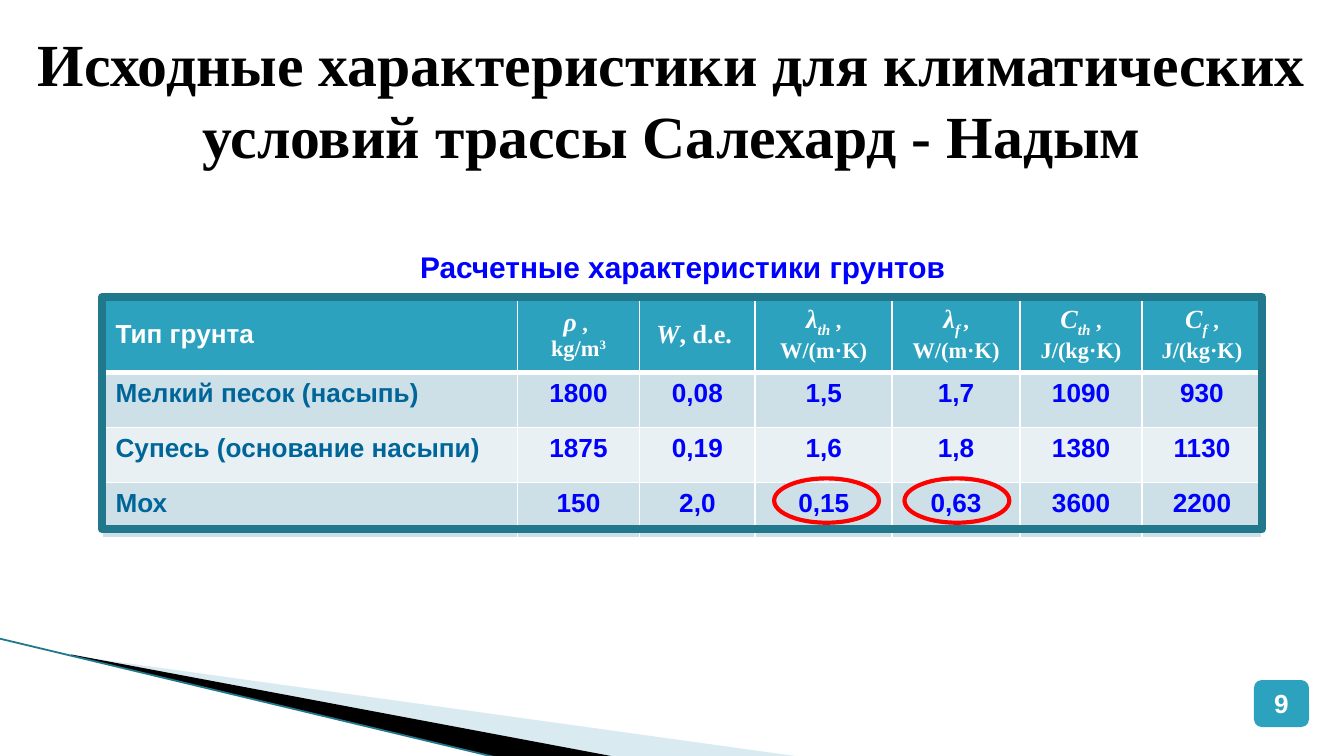
from dataclasses import dataclass

from lxml.etree import SubElement
from pptx import Presentation
from pptx.dml.color import RGBColor
from pptx.enum.shapes import MSO_CONNECTOR, MSO_SHAPE
from pptx.enum.text import MSO_ANCHOR, PP_ALIGN
from pptx.oxml.ns import qn
from pptx.util import Inches, Pt


@dataclass(frozen=True)
class Theme:
    serif: str = "Times New Roman"
    sans: str = "Arial"
    black: str = "000000"
    white: str = "FFFFFF"
    accent: str = "2DA2BF"
    frame: str = "21788D"
    pale: str = "A0CBDC"
    bands: tuple = ("CDE0E8", "E8F0F4")
    label: str = "006699"
    value: str = "0000FF"
    highlight: str = "FF0000"
    title_size: int = 32
    caption_size: int = 16
    body_size: int = 14
    unit_size: int = 12


def color(value):
    return RGBColor.from_string(value)


class SlideBuilder:
    def __init__(self, slide, theme):
        self.slide = slide
        self.theme = theme

    def style(self, paragraph, font_name, size, font_color, alignment=PP_ALIGN.CENTER):
        paragraph.alignment = alignment
        paragraph.font.name = font_name
        paragraph.font.size = Pt(size)
        paragraph.font.bold = True
        paragraph.font.color.rgb = color(font_color)

    def title(self, text, left, top, width, height):
        shape = self.slide.shapes.title
        shape.left, shape.top = Inches(left), Inches(top)
        shape.width, shape.height = Inches(width), Inches(height)
        frame = shape.text_frame
        frame.text = text
        frame.word_wrap = True
        frame.vertical_anchor = MSO_ANCHOR.TOP
        paragraph = frame.paragraphs[0]
        self.style(paragraph, self.theme.serif, self.theme.title_size, self.theme.black)

    def shape(self, kind, left, top, width, height, fill=None, line=None, line_width=1):
        shape = self.slide.shapes.add_shape(
            kind, Inches(left), Inches(top), Inches(width), Inches(height))
        self.paint(shape, fill, line, line_width)
        return shape

    def paint(self, shape, fill=None, line=None, line_width=1):
        shape.shadow.inherit = False
        if fill:
            shape.fill.solid()
            shape.fill.fore_color.rgb = color(fill)
        else:
            shape.fill.background()
        if line:
            shape.line.color.rgb = color(line)
            shape.line.width = Pt(line_width)
        else:
            shape.line.fill.background()

    def label(self, kind, text, box, fill, size, font_color):
        frame = self.shape(kind, *box, fill=fill).text_frame
        frame.text = text
        frame.word_wrap = True
        frame.vertical_anchor = MSO_ANCHOR.MIDDLE
        frame.margin_left = frame.margin_right = Inches(0.04)
        frame.margin_top = frame.margin_bottom = Inches(0.04)
        self.style(frame.paragraphs[0], self.theme.sans, size, font_color)

    def wedge(self, points, fill, opacity=100):
        corners = [(Inches(x), Inches(y)) for x, y in points]
        builder = self.slide.shapes.build_freeform(*corners[0])
        builder.add_line_segments(corners[1:], close=True)
        shape = builder.convert_to_shape()
        self.paint(shape, fill)
        if opacity < 100:
            tint = shape.element.spPr.find(qn("a:solidFill"))[0]
            SubElement(tint, qn("a:alpha"), val=str(opacity * 1000))

    def line(self, start, end, line_color, width):
        connector = self.slide.shapes.add_connector(
            MSO_CONNECTOR.STRAIGHT, *(Inches(value) for value in (*start, *end)))
        connector.line.color.rgb = color(line_color)
        connector.line.width = Pt(width)
        SubElement(connector.element.spPr, qn("a:effectLst"))

    def cell(self, cell, fill, bottom_width=1):
        properties = cell._tc.get_or_add_tcPr()
        for side in ("L", "R", "T", "B"):
            width = Pt(bottom_width if side == "B" else 1)
            border = SubElement(properties, qn(f"a:ln{side}"), w=str(width))
            solid = SubElement(border, qn("a:solidFill"))
            SubElement(solid, qn("a:srgbClr"), val=self.theme.white)
        cell.fill.solid()
        cell.fill.fore_color.rgb = color(fill)

    def header(self, cell, paragraphs, font_name, alignment):
        self.cell(cell, self.theme.accent, bottom_width=3)
        cell.vertical_anchor = MSO_ANCHOR.MIDDLE
        for index, runs in enumerate(paragraphs):
            frame = cell.text_frame
            paragraph = frame.add_paragraph() if index else frame.paragraphs[0]
            self.style(paragraph, font_name, self.theme.body_size, self.theme.white, alignment)
            for text, size, italic, baseline in runs:
                run = paragraph.add_run()
                run.text = text
                run.font.size = Pt(size)
                run.font.italic = italic
                if baseline:
                    run.font._element.set("baseline", str(baseline * 1000))

    def table(self, left, top, widths, heights, headers, rows):
        theme = self.theme
        table = self.slide.shapes.add_table(
            len(heights), len(widths), Inches(left), Inches(top),
            Inches(sum(widths)), Inches(sum(heights))).table
        for column, width in zip(table.columns, widths):
            column.width = Inches(width)
        for row, height in zip(table.rows, heights):
            row.height = Inches(height)
        for index, paragraphs in enumerate(headers):
            font_name = theme.serif if index else theme.sans
            alignment = PP_ALIGN.CENTER if index else PP_ALIGN.LEFT
            self.header(table.cell(0, index), paragraphs, font_name, alignment)
        for row_index, values in enumerate(rows):
            for index, value in enumerate(values):
                cell = table.cell(row_index + 1, index)
                self.cell(cell, theme.bands[row_index % 2])
                cell.text_frame.text = value
                self.style(cell.text_frame.paragraphs[0], theme.sans, theme.body_size,
                           theme.value if index else theme.label,
                           PP_ALIGN.CENTER if index else PP_ALIGN.LEFT)


def main():
    theme = Theme()
    presentation = Presentation()
    presentation.slide_width = Inches(10)
    presentation.slide_height = presentation.slide_width * 9 // 16
    slide = presentation.slides.add_slide(presentation.slide_layouts[5])
    builder = SlideBuilder(slide, theme)

    builder.wedge([(0.55, 4.88), (5.95, 5.63), (4.56, 5.63)], theme.pale, opacity=40)
    builder.wedge([(0.53, 4.87), (4.57, 5.63), (3.72, 5.64), (0.54, 4.88)], theme.black)
    builder.line((-0.01, 4.75), (3.71, 5.64), theme.frame, 0.95)
    builder.title("Исходные характеристики для климатических условий трассы Салехард - Надым",
                  0, 0.15, 10, 1.18)

    body, unit = theme.body_size, theme.unit_size

    def quantity(symbol, subscript, units, space_baseline=0):
        return [[(symbol, body, True, 0), (subscript, body, True, -25),
                 (" ", unit, True, space_baseline), (f", {units}", unit, False, 0)]]

    headers = [
        [[("Тип грунта", body, False, 0)]],
        [[("ρ", body, True, 0), (" ", unit, True, 0), (", ", unit, False, 0)],
         [("kg/m", unit, False, 0), ("3", unit, False, 30)]],
        [[("W", body, True, 0), (", d.e. ", body, False, 0)]],
        quantity("λ", "th", "W/(m·K)"),
        quantity("λ", "f", "W/(m·K)", space_baseline=-25),
        quantity("C", "th", "J/(kg·K)"),
        quantity("C", "f", "J/(kg·K)"),
    ]
    rows = [
        ("Мелкий песок (насыпь)", "1800", "0,08", "1,5", "1,7", "1090", "930"),
        ("Супесь (основание насыпи)", "1875", "0,19", "1,6", "1,8", "1380", "1130"),
        ("Мох", "150", "2,0", "0,15", "0,63", "3600", "2200"),
    ]
    builder.table(0.76, 2.21, [3.09, 0.91, 0.86, 1.02, 0.95, 0.91, 0.89],
                  [0.56] + [0.41] * len(rows), headers, rows)
    builder.shape(MSO_SHAPE.RECTANGLE, 0.76, 2.21, 8.63, 1.73,
                  line=theme.frame, line_width=4.33)
    builder.label(MSO_SHAPE.RECTANGLE, "Расчетные характеристики грунтов",
                  (1.74, 1.81, 6.68, 0.35), theme.white, theme.caption_size, theme.value)
    builder.label(MSO_SHAPE.ROUNDED_RECTANGLE, "9", (9.33, 5.06, 0.41, 0.35),
                  theme.accent, theme.body_size, theme.white)
    for left in (5.76, 6.73):
        builder.shape(MSO_SHAPE.OVAL, left, 3.56, 0.78, 0.33,
                      line=theme.highlight, line_width=2.25)

    presentation.save("out.pptx")


if __name__ == "__main__":
    main()
